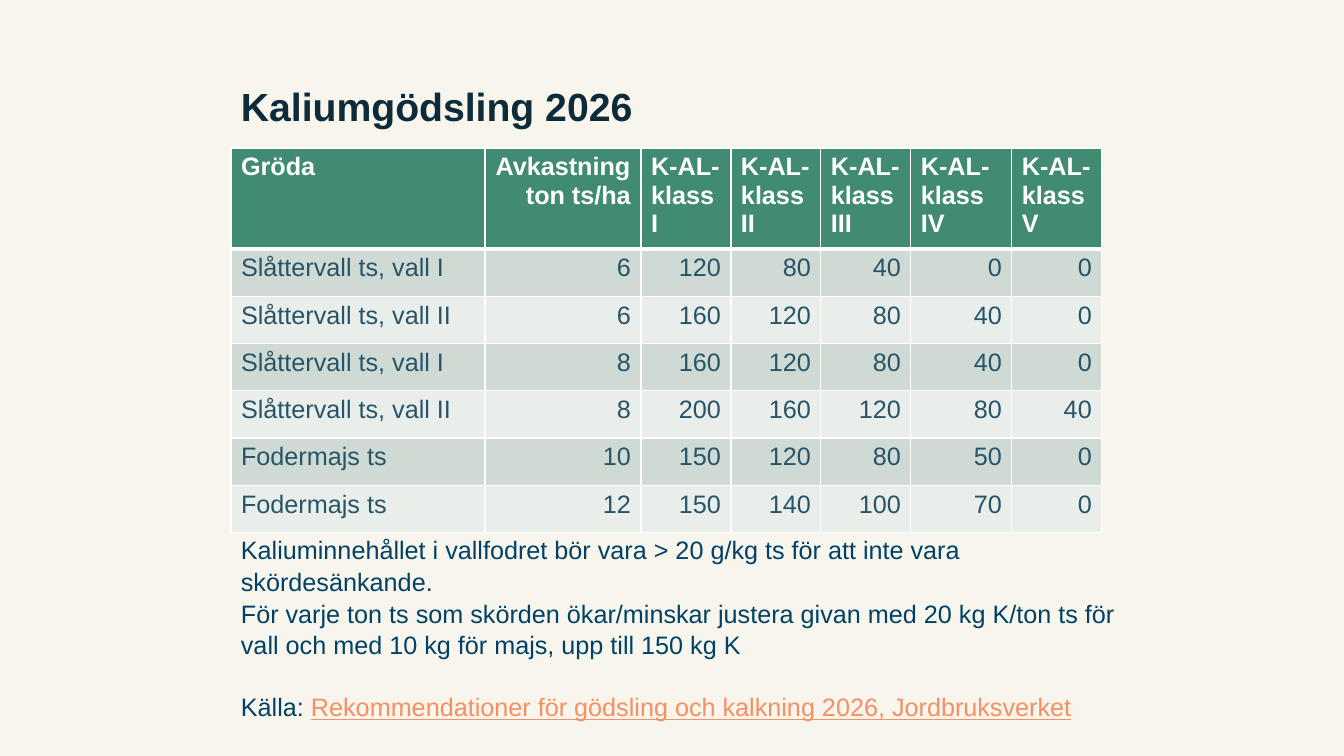
"""Build the slide on potassium fertilisation, Kaliumgödsling 2026."""
import pptx
import pptx.util
import pptx.dml.color
import pptx.enum.text
import pptx.oxml

SCALE = 914400 / 100.8
THEME = {
    "font": "Arial", "title": 28, "body": 18,
    "back": "F8F5ED", "dark": "0D2B38", "white": "FFFFFF", "head": "418B73",
    "bands": ["CFDAD5", "E9EEEB"], "cell": "285468", "note": "004165", "link": "F68F61",
}
ALIGN = pptx.enum.text.PP_ALIGN
ANCHOR = pptx.enum.text.MSO_ANCHOR
rgb = pptx.dml.color.RGBColor.from_string


def px(size):
    """Turn pixels into EMU."""
    return pptx.util.Emu(round(size * SCALE))


def write(para, text, color, size=THEME["body"], bold=False):
    """Add one styled run to a paragraph."""
    run = para.add_run()
    run.text = text
    run.font.name = THEME["font"]
    run.font.size = pptx.util.Pt(size)
    run.font.bold = bold
    run.font.color.rgb = rgb(color)
    return run


deck = pptx.Presentation()
deck.slide_width, deck.slide_height = px(1344), px(756)
slide = deck.slides.add_slide(deck.slide_layouts[6])
slide.background.fill.solid()
slide.background.fill.fore_color.rgb = rgb(THEME["back"])

title = slide.shapes.add_textbox(px(231), px(51), px(811), px(84)).text_frame
title.word_wrap = True
title.vertical_anchor = ANCHOR.BOTTOM
title.paragraphs[0].line_spacing = 0.9
write(title.paragraphs[0], "Kaliumgödsling 2026", THEME["dark"], THEME["title"], True)

rows = [
    ["Gröda", "Avkastning\nton ts/ha", "K-AL-klass I", "K-AL-klass\nII",
     "K-AL-klass\nIII", "K-AL-klass IV", "K-AL-klass\nV"],
    ["Slåttervall ts, vall I", 6, 120, 80, 40, 0, 0],
    ["Slåttervall ts, vall II", 6, 160, 120, 80, 40, 0],
    ["Slåttervall ts, vall I", 8, 160, 120, 80, 40, 0],
    ["Slåttervall ts, vall II", 8, 200, 160, 120, 80, 40],
    ["Fodermajs ts", 10, 150, 120, 80, 50, 0],
    ["Fodermajs ts", 12, 150, 140, 100, 70, 0],
]
widths = [254, 156, 90, 90, 90, 101, 90]
frame = slide.shapes.add_table(len(rows), len(widths), px(231), px(148), px(sum(widths)), px(377))
table = frame.table
for col, width in zip(table.columns, widths):
    col.width = px(width)
for r, row in enumerate(rows):
    head = r == 0
    table.rows[r].height = px(93) if head else px(284 / 6)
    for c, value in enumerate(row):
        cell = table.cell(r, c)
        props = cell._tc.get_or_add_tcPr()
        for side in "LRTB":
            thick = (head and side == "B") or (r == 1 and side == "T")
            props.append(pptx.oxml.parse_xml(
                '<a:ln%s xmlns:a="http://schemas.openxmlformats.org/drawingml/2006/main" w="%d">'
                '<a:solidFill><a:srgbClr val="%s"/></a:solidFill></a:ln%s>'
                % (side, pptx.util.Pt(3 if thick else 1), THEME["white"], side)))
        cell.fill.solid()
        cell.fill.fore_color.rgb = rgb(THEME["head"] if head else THEME["bands"][(r - 1) % 2])
        for i, line in enumerate(str(value).split("\n")):
            para = cell.text_frame.add_paragraph() if i else cell.text_frame.paragraphs[0]
            if head and c == 1:
                para.alignment = ALIGN.RIGHT if i else ALIGN.CENTER
            else:
                para.alignment = ALIGN.LEFT if head or c == 0 else ALIGN.RIGHT
            write(para, line, THEME["white"] if head else THEME["cell"], bold=head)

notes = [
    "Kaliuminnehållet i vallfodret bör vara > 20 g/kg ts för att inte vara skördesänkande.",
    "För varje ton ts som skörden ökar/minskar justera givan med 20 kg K/ton ts för vall "
    "och med 10 kg för majs, upp till 150 kg K",
    "Källa: ",
]
body = slide.shapes.add_textbox(px(231), px(536), px(919), px(183)).text_frame
body.word_wrap = True
body.vertical_anchor = ANCHOR.MIDDLE
for i, note in enumerate(notes):
    para = body.add_paragraph() if i else body.paragraphs[0]
    para.line_spacing = 1.05
    write(para, note, THEME["note"])
para.space_before = pptx.util.Pt(21.6)
link = write(para, "Rekommendationer för gödsling och kalkning 2026, Jordbruksverket", THEME["link"])
link.font.underline = True

deck.save("out.pptx")
